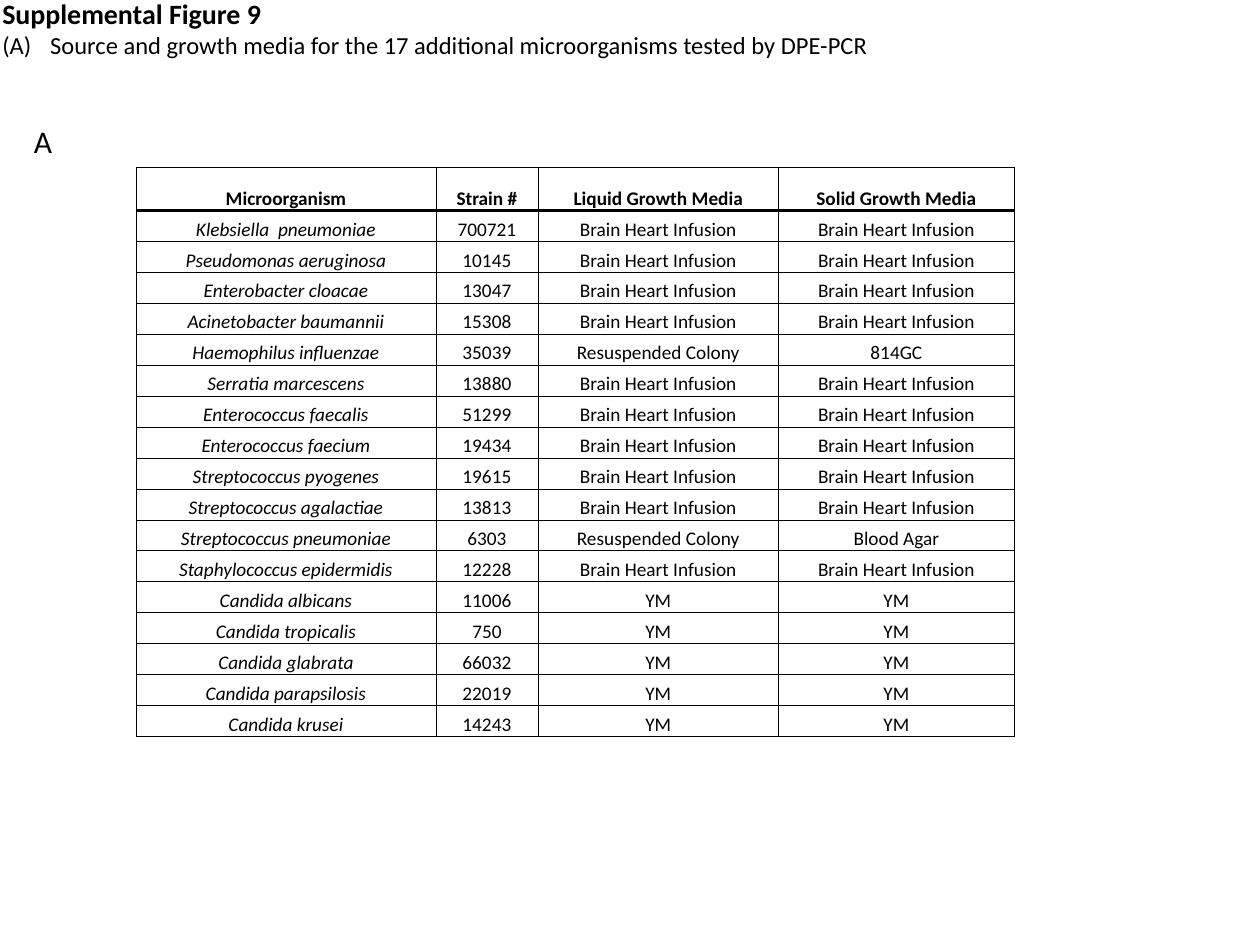
from lxml.etree import SubElement
from pptx import Presentation
from pptx.dml.color import RGBColor
from pptx.enum.text import MSO_ANCHOR, MSO_AUTO_SIZE, PP_ALIGN
from pptx.oxml.ns import qn
from pptx.util import Inches, Pt

FONT = "Calibri"
BLACK = "000000"
TITLE = "Supplemental Figure 9"
CAPTION = "Source and growth media for the 17 additional microorganisms tested by DPE-PCR"
PANEL_LABEL = "A"

BHI = "Brain Heart Infusion"
COLONY = "Resuspended Colony"
HEADERS = ("Microorganism", "Strain #", "Liquid Growth Media", "Solid Growth Media")
ORGANISMS = [
    ("Klebsiella  pneumoniae", "700721", BHI, BHI),
    ("Pseudomonas aeruginosa", "10145", BHI, BHI),
    ("Enterobacter cloacae", "13047", BHI, BHI),
    ("Acinetobacter baumannii", "15308", BHI, BHI),
    ("Haemophilus influenzae", "35039", COLONY, "814GC"),
    ("Serratia marcescens", "13880", BHI, BHI),
    ("Enterococcus faecalis", "51299", BHI, BHI),
    ("Enterococcus faecium", "19434", BHI, BHI),
    ("Streptococcus pyogenes", "19615", BHI, BHI),
    ("Streptococcus agalactiae", "13813", BHI, BHI),
    ("Streptococcus pneumoniae", "6303", COLONY, "Blood Agar"),
    ("Staphylococcus epidermidis", "12228", BHI, BHI),
    ("Candida albicans", "11006", "YM", "YM"),
    ("Candida tropicalis", "750", "YM", "YM"),
    ("Candida glabrata", "66032", "YM", "YM"),
    ("Candida parapsilosis", "22019", "YM", "YM"),
    ("Candida krusei", "14243", "YM", "YM"),
]

COLUMN_WIDTHS = (2.38, 0.81, 1.91, 1.87)
TABLE_LEFT, TABLE_TOP, TABLE_HEIGHT = 1.08, 1.33, 4.52
HEADER_HEIGHT = 0.34
THIN, THICK = 0.5, 2


def color(value):
    return RGBColor.from_string(value)


def write(paragraph, text, size, bold=False, italic=False, align=PP_ALIGN.LEFT):
    paragraph.alignment = align
    run = paragraph.add_run()
    run.text = text
    run.font.name = FONT
    run.font.size = Pt(size)
    run.font.bold = bold
    run.font.italic = italic
    run.font.color.rgb = color(BLACK)


def add_text_box(slide, left, top, width, height):
    box = slide.shapes.add_textbox(*map(Inches, (left, top, width, height)))
    frame = box.text_frame
    frame.word_wrap = False
    frame.auto_size = MSO_AUTO_SIZE.SHAPE_TO_FIT_TEXT
    return frame


def number_paragraph(paragraph, indent):
    properties = paragraph._p.get_or_add_pPr()
    properties.set("marL", str(Inches(indent)))
    properties.set("indent", str(-Inches(indent)))
    SubElement(properties, qn("a:buAutoNum"), type="alphaUcParenBoth")


def set_borders(cell, top, bottom):
    properties = cell._tc.get_or_add_tcPr()
    for side, weight in (("L", THIN), ("R", THIN), ("T", top), ("B", bottom)):
        line = SubElement(properties, qn(f"a:ln{side}"), w=str(Pt(weight)))
        fill = SubElement(line, qn("a:solidFill"))
        SubElement(fill, qn("a:srgbClr"), val=BLACK)


def add_organism_table(slide):
    rows = [HEADERS, *ORGANISMS]
    shape = slide.shapes.add_table(
        len(rows), len(HEADERS), Inches(TABLE_LEFT), Inches(TABLE_TOP),
        Inches(sum(COLUMN_WIDTHS)), Inches(TABLE_HEIGHT))
    table = shape.table
    table.first_row = table.horz_banding = False
    for column, width in zip(table.columns, COLUMN_WIDTHS):
        column.width = Inches(width)
    body_height = (TABLE_HEIGHT - HEADER_HEIGHT) / len(ORGANISMS)
    for r, values in enumerate(rows):
        table.rows[r].height = Inches(body_height if r else HEADER_HEIGHT)
        for c, value in enumerate(values):
            cell = table.cell(r, c)
            cell.vertical_anchor = MSO_ANCHOR.BOTTOM
            cell.margin_left = cell.margin_right = cell.margin_top = Inches(0.01)
            cell.margin_bottom = 0
            set_borders(cell, THICK if r == 1 else THIN, THICK if r == 0 else THIN)
            cell.fill.background()
            write(cell.text_frame.paragraphs[0], value, 11, bold=r == 0,
                  italic=r > 0 and c == 0, align=PP_ALIGN.CENTER)


def main():
    presentation = Presentation()
    presentation.slide_width = Inches(10)
    presentation.slide_height = Inches(7.5)
    slide = presentation.slides.add_slide(presentation.slide_layouts[6])

    heading = add_text_box(slide, -0.08, -0.08, 7.13, 0.61)
    write(heading.paragraphs[0], TITLE, 16, bold=True)
    caption = heading.add_paragraph()
    number_paragraph(caption, 0.38)
    write(caption, CAPTION, 14)

    label = add_text_box(slide, 0.17, 0.92, 0.35, 0.4)
    write(label.paragraphs[0], PANEL_LABEL, 18)

    add_organism_table(slide)
    presentation.save("out.pptx")


if __name__ == "__main__":
    main()
